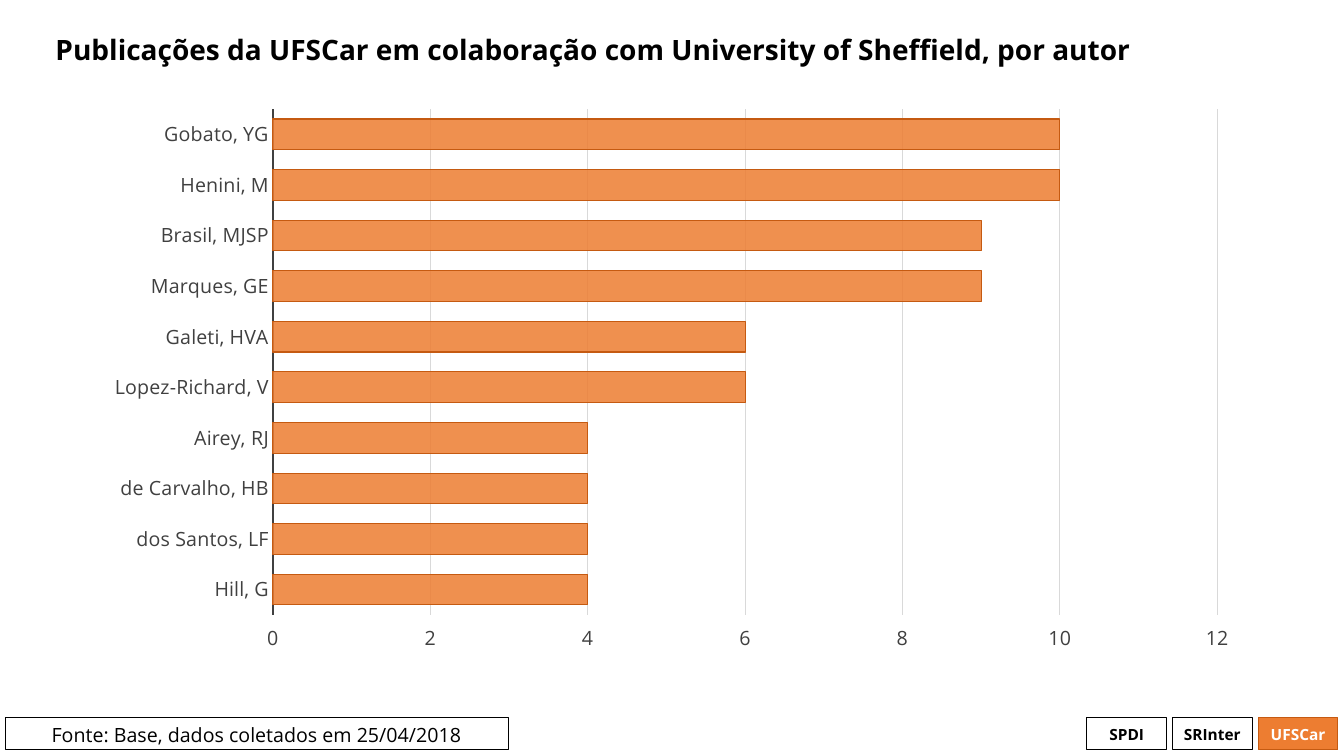
"""Slide with a bar chart of joint publications by author."""
from lxml import etree
from pptx import Presentation
from pptx import util as u
from pptx.chart import data
from pptx.dml import color
from pptx.enum import chart as ch, shapes, text
from pptx.oxml import parse_xml
from pptx.oxml.ns import nsdecls, qn

COLORS = {"black": "000000", "white": "FFFFFF", "orange": "ED7D31",
          "rust": "C55A11", "gray": "404040", "grid": "D9D9D9"}
FONT = "Open Sans"
COUNTS = {"Gobato, YG": 10, "Henini, M": 10, "Brasil, MJSP": 9,
          "Marques, GE": 9, "Galeti, HVA": 6, "Lopez-Richard, V": 6,
          "Airey, RJ": 4, "de Carvalho, HB": 4, "dos Santos, LF": 4,
          "Hill, G": 4}


def rgb(name):
    return color.RGBColor.from_string(COLORS[name])


def write(shape, words, size=11, bold=True, ink="black",
          align=text.PP_ALIGN.CENTER, anchor=text.MSO_ANCHOR.MIDDLE):
    frame = shape.text_frame
    frame.word_wrap = True
    frame.vertical_anchor = anchor
    para = frame.paragraphs[0]
    para.alignment = align
    span = para.add_run()
    span.text = words
    span.font.name, span.font.size, span.font.bold = FONT, u.Pt(size), bold
    span.font.color.rgb = rgb(ink)
    return para


deck = Presentation()
deck.slide_width, deck.slide_height = u.Inches(13.33), u.Inches(7.5)
page = deck.slides.add_slide(deck.slide_layouts[5])

title = page.shapes.title
title.left, title.top = u.Inches(0.45), u.Inches(0.06)
title.width, title.height = u.Inches(12.41), u.Inches(0.91)
heading = write(title, "Publicações da UFSCar em colaboração com University of Sheffield, por autor",
                size=20, align=text.PP_ALIGN.LEFT)
heading.line_spacing = 0.9

TAB_LEFT, TAB_STEP, TAB_WIDTH = 10.78, 0.85, 0.79
tabs = [(TAB_LEFT + i * TAB_STEP, TAB_WIDTH, words, {})
        for i, words in enumerate(["SPDI", "SRInter", "UFSCar"])]
tabs[-1][3]["ink"] = "white"
source = (0.05, 4.99, "Fonte: Base, dados coletados em 25/04/2018",
          {"size": 14, "bold": False, "anchor": text.MSO_ANCHOR.TOP})
for left, width, words, style in tabs + [source]:
    box = page.shapes.add_shape(shapes.MSO_SHAPE.RECTANGLE, u.Inches(left),
                                u.Inches(7.12), u.Inches(width), u.Inches(0.32))
    box.shadow.inherit = False
    active = style.get("ink") == "white"
    if active:
        box.fill.solid()
        box.fill.fore_color.rgb = rgb("orange")
    else:
        box.fill.background()
    box.line.color.rgb = rgb("rust" if active else "black")
    box.line.width = u.Pt(0.75)
    write(box, words, **style)

numbers = data.CategoryChartData()
numbers.categories = list(COUNTS)
numbers.add_series("Series 1", list(COUNTS.values()))
chart = page.shapes.add_chart(
    ch.XL_CHART_TYPE.BAR_CLUSTERED, u.Inches(0.91), u.Inches(0.97),
    u.Inches(11.52), u.Inches(5.62), numbers).chart
chart.has_legend = chart.has_title = False
chart.font.name, chart.font.size = FONT, u.Pt(14)
chart.font.color.rgb = rgb("black")

authors, totals = chart.category_axis, chart.value_axis
for axis in (authors, totals):
    axis.major_tick_mark = axis.minor_tick_mark = ch.XL_TICK_MARK.NONE
    labels = axis.tick_labels.font
    labels.name, labels.size = FONT, u.Pt(14)
    labels.color.rgb = rgb("gray")
authors.reverse_order = True
authors.has_major_gridlines = False
authors.format.line.color.rgb = rgb("gray")
authors.format.line.width = u.Pt(1.5)
totals.tick_label_position = ch.XL_TICK_LABEL_POSITION.HIGH
totals.minimum_scale, totals.maximum_scale, totals.major_unit = 0, 12, 2
totals.format.line.fill.background()
totals.has_major_gridlines = True
totals.major_gridlines.format.line.color.rgb = rgb("grid")
totals.major_gridlines.format.line.width = u.Pt(0.75)

plot = chart.plots[0]
plot.gap_width = 65
plot.vary_by_categories = False
bars = plot.series[0].format
bars.fill.solid()
bars.fill.fore_color.rgb = rgb("orange")
bars.line.color.rgb = rgb("rust")
bars.line.width = u.Pt(0.75)
tint = plot.series[0]._element.find(f"{qn('c:spPr')}/{qn('a:solidFill')}/{qn('a:srgbClr')}")
etree.SubElement(tint, qn("a:alpha")).set("val", "85000")

area = chart._chartSpace.chart.plotArea
for layout in area.findall(qn("c:layout")):
    area.remove(layout)
shares = "".join(f'<c:{key} val="{share}"/>' for key, share in
                 [("x", 0.156), ("y", 0.02), ("w", 0.813), ("h", 0.893)])
area.insert(0, parse_xml(
    f'<c:layout {nsdecls("c")}><c:manualLayout><c:layoutTarget val="inner"/>'
    f'<c:xMode val="edge"/><c:yMode val="edge"/>{shares}</c:manualLayout></c:layout>'))

deck.save("out.pptx")
